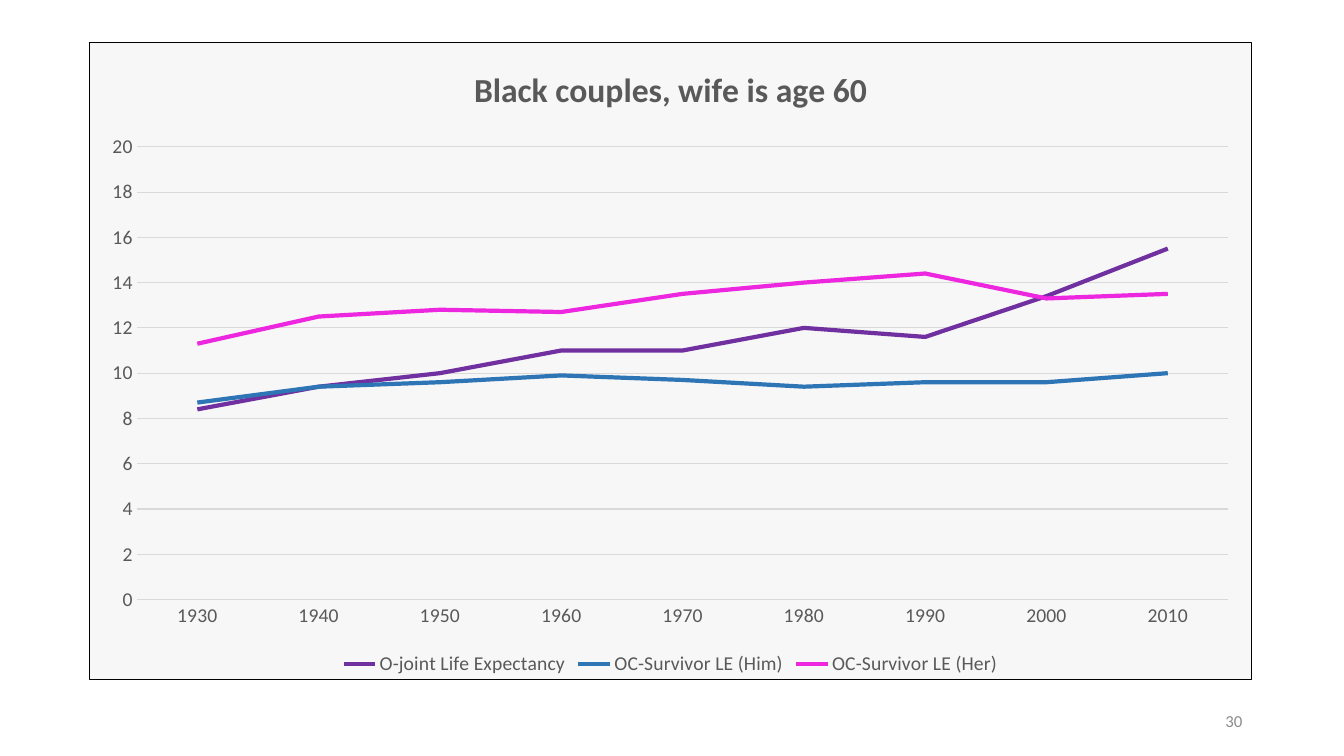
"""Build a slide with a line chart of life expectancy for Black couples."""
from pptx import Presentation
from pptx.chart.data import CategoryChartData
from pptx.dml.color import RGBColor
from pptx.enum import chart as kinds, text
from pptx.oxml import parse_xml
from pptx.util import Inches, Pt

TITLE = "Black couples, wife is age 60"
PAGE_NUMBER = "30"
YEARS = [str(year) for year in range(1930, 2011, 10)]
SERIES = [
    ("O-joint Life Expectancy", "7030A0", (8.4, 9.4, 10, 11, 11, 12, 11.6, 13.4, 15.5)),
    ("OC-Survivor LE (Him)", "2E75B6", (8.7, 9.4, 9.6, 9.9, 9.7, 9.4, 9.6, 9.6, 10)),
    ("OC-Survivor LE (Her)", "ED27DF", (11.3, 12.5, 12.8, 12.7, 13.5, 14, 14.4, 13.3, 13.5)),
]
CHART_AREA = (0.88, 0.42, 11.54, 6.33)
NUMBER_AREA = (9.42, 6.95, 3, 0.4)
GREY, GRID = "595959", "D9D9D9"
FRAME_XML = """
<c:spPr xmlns:c="http://schemas.openxmlformats.org/drawingml/2006/chart"
        xmlns:a="http://schemas.openxmlformats.org/drawingml/2006/main">
  <a:solidFill><a:srgbClr val="F2F2F2"><a:alpha val="55000"/></a:srgbClr></a:solidFill>
  <a:ln w="9525"><a:solidFill><a:srgbClr val="000000"/></a:solidFill></a:ln>
</c:spPr>"""


def color(value):
    return RGBColor.from_string(value)


def style_font(font, size, fill=GREY, bold=False):
    font.name, font.size, font.bold = "Calibri", Pt(size), bold
    font.color.rgb = color(fill)


def style_line(line, fill, width):
    line.color.rgb = color(fill)
    line.width = Pt(width)


def write(frame, words, align=None, **style):
    para = frame.paragraphs[0]
    para.alignment = align
    span = para.add_run()
    span.text = words
    style_font(span.font, **style)


def add_line_chart(page):
    data = CategoryChartData(number_format="0.0")
    data.categories = YEARS
    for name, _, values in SERIES:
        data.add_series(name, values)
    chart = page.shapes.add_chart(
        kinds.XL_CHART_TYPE.LINE, *map(Inches, CHART_AREA), data).chart
    style_font(chart.font, 10, "000000")
    chart._chartSpace.chart.addnext(parse_xml(FRAME_XML))

    chart.has_title = True
    write(chart.chart_title.text_frame, TITLE, size=24, bold=True)
    chart.has_legend = True
    chart.legend.position = kinds.XL_LEGEND_POSITION.BOTTOM
    chart.legend.include_in_layout = False
    style_font(chart.legend.font, 14)

    for axis in (chart.category_axis, chart.value_axis):
        axis.major_tick_mark = axis.minor_tick_mark = kinds.XL_TICK_MARK.NONE
        style_font(axis.tick_labels.font, 14)
    style_line(chart.category_axis.format.line, GRID, 0.75)
    scale = chart.value_axis
    scale.minimum_scale, scale.maximum_scale, scale.major_unit = 0, 20, 2
    scale.tick_labels.number_format = "#,##0"
    scale.tick_labels.number_format_is_linked = False
    scale.format.line.fill.background()
    style_line(scale.major_gridlines.format.line, GRID, 0.75)

    plot = chart.plots[0]
    plot.vary_by_categories = False
    for series, (_, fill, _) in zip(plot.series, SERIES):
        series.smooth = False
        series.marker.style = kinds.XL_MARKER_STYLE.NONE
        style_line(series.format.line, fill, 3)


def add_page_number(page):
    frame = page.shapes.add_textbox(*map(Inches, NUMBER_AREA)).text_frame
    frame.word_wrap = True
    frame.vertical_anchor = text.MSO_ANCHOR.MIDDLE
    write(frame, PAGE_NUMBER, text.PP_ALIGN.RIGHT, size=12, fill="8C8C8C")


def main():
    deck = Presentation()
    deck.slide_width, deck.slide_height = Inches(13.33), Inches(7.5)
    page = deck.slides.add_slide(deck.slide_layouts[6])
    add_line_chart(page)
    add_page_number(page)
    deck.save("out.pptx")


if __name__ == "__main__":
    main()
